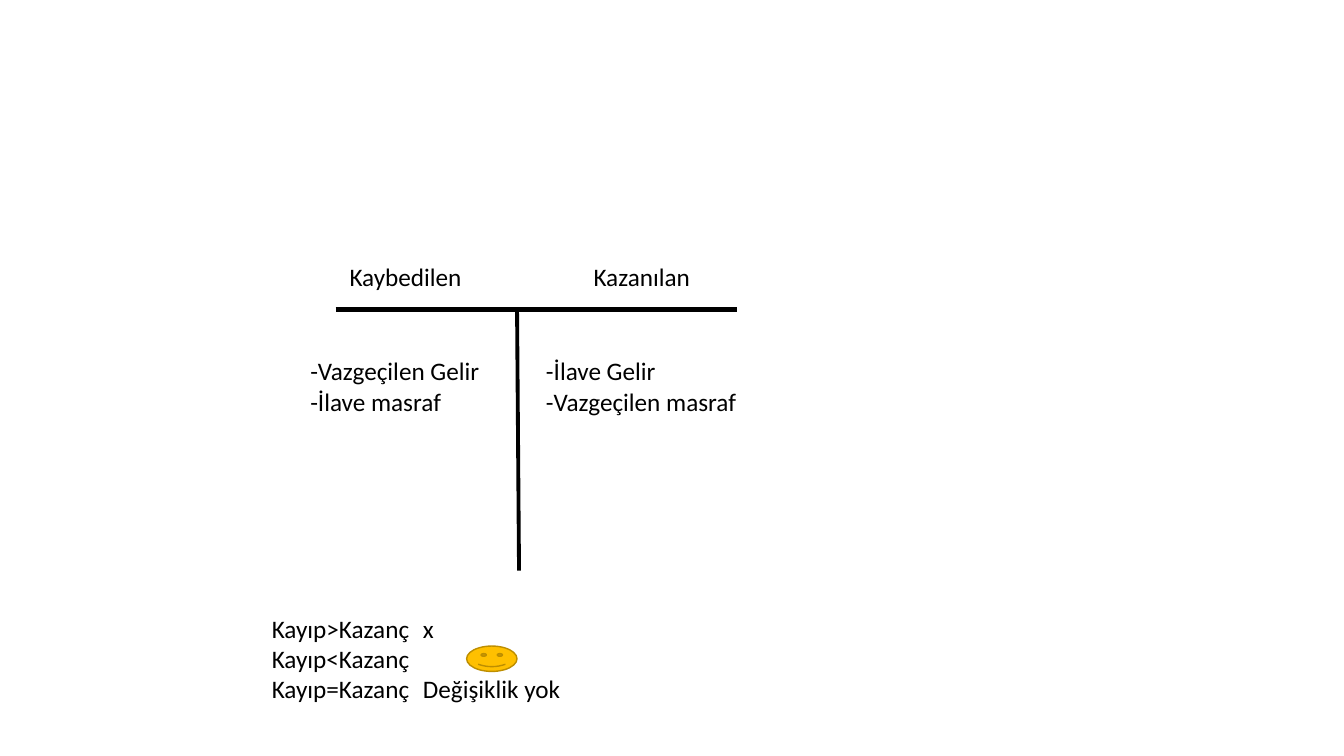
from dataclasses import dataclass

from lxml.etree import SubElement
from pptx import Presentation
from pptx.dml.color import RGBColor
from pptx.enum.shapes import MSO_CONNECTOR, MSO_SHAPE
from pptx.enum.text import MSO_AUTO_SIZE
from pptx.oxml.ns import qn
from pptx.slide import Slide
from pptx.util import Cm, Pt


@dataclass(frozen=True)
class Theme:
    font: str = "Calibri"
    size: Pt = Pt(18)
    ink: RGBColor = RGBColor(0x00, 0x00, 0x00)
    face: RGBColor = RGBColor(0xFF, 0xC0, 0x00)
    face_line: RGBColor = RGBColor(0xBD, 0x8E, 0x00)


@dataclass(frozen=True)
class Label:
    """A text block; lengths in centimetres."""
    left: float
    top: float
    width: float
    height: float
    lines: tuple[str, ...]


@dataclass(frozen=True)
class Rule:
    """A straight line; lengths in centimetres, weight in points."""
    x1: float
    y1: float
    x2: float
    y2: float
    weight: float


THEME = Theme()
HEAD_TOP, BAR_Y, ENTRY_TOP = 6.45, 7.8, 8.84

RULES = (
    Rule(8.46, BAR_Y, 18.57, BAR_Y, 3.25),
    Rule(13.03, BAR_Y, 13.08, 14.38, 2.75),
)
LABELS = (
    Label(8.56, HEAD_TOP, 4.47, 1.02, ("Kaybedilen",)),
    Label(14.71, HEAD_TOP, 4.47, 1.02, ("Kazanılan",)),
    Label(7.57, ENTRY_TOP, 5.08, 1.8, ("-Vazgeçilen Gelir", "-İlave masraf")),
    Label(13.51, ENTRY_TOP, 5.66, 1.8, ("-İlave Gelir", "-Vazgeçilen masraf")),
    Label(6.6, 15.32, 18.64, 2.57,
          ("Kayıp>Kazanç \tx", "Kayıp<Kazanç", "Kayıp=Kazanç \tDeğişiklik yok")),
)


def add_rule(s: Slide, rule: Rule) -> None:
    line = s.shapes.add_connector(
        MSO_CONNECTOR.STRAIGHT, Cm(rule.x1), Cm(rule.y1), Cm(rule.x2), Cm(rule.y2))
    line.line.color.rgb = THEME.ink
    line.line.width = Pt(rule.weight)
    SubElement(line._element.spPr, qn("a:effectLst"))


def add_label(s: Slide, label: Label) -> None:
    box = s.shapes.add_textbox(
        Cm(label.left), Cm(label.top), Cm(label.width), Cm(label.height))
    tf = box.text_frame
    tf.word_wrap = True
    tf.auto_size = MSO_AUTO_SIZE.SHAPE_TO_FIT_TEXT
    for i, text in enumerate(label.lines):
        p = tf.add_paragraph() if i else tf.paragraphs[0]
        r = p.add_run()
        r.text = text
        r.font.name = THEME.font
        r.font.size = THEME.size
        r.font.color.rgb = THEME.ink


def add_smiley(s: Slide) -> None:
    sp = s.shapes.add_shape(
        MSO_SHAPE.SMILEY_FACE, Cm(11.76), Cm(16.28), Cm(1.27), Cm(0.64))
    sp.shadow.inherit = False
    sp.fill.solid()
    sp.fill.fore_color.rgb = THEME.face
    sp.line.color.rgb = THEME.face_line
    sp.line.width = Pt(1)


def main() -> None:
    prs = Presentation()
    prs.slide_width, prs.slide_height = Cm(33.87), Cm(19.05)
    s = prs.slides.add_slide(prs.slide_layouts[6])
    for rule in RULES:
        add_rule(s, rule)
    for label in LABELS:
        add_label(s, label)
    add_smiley(s)
    prs.save("out.pptx")


if __name__ == "__main__":
    main()
